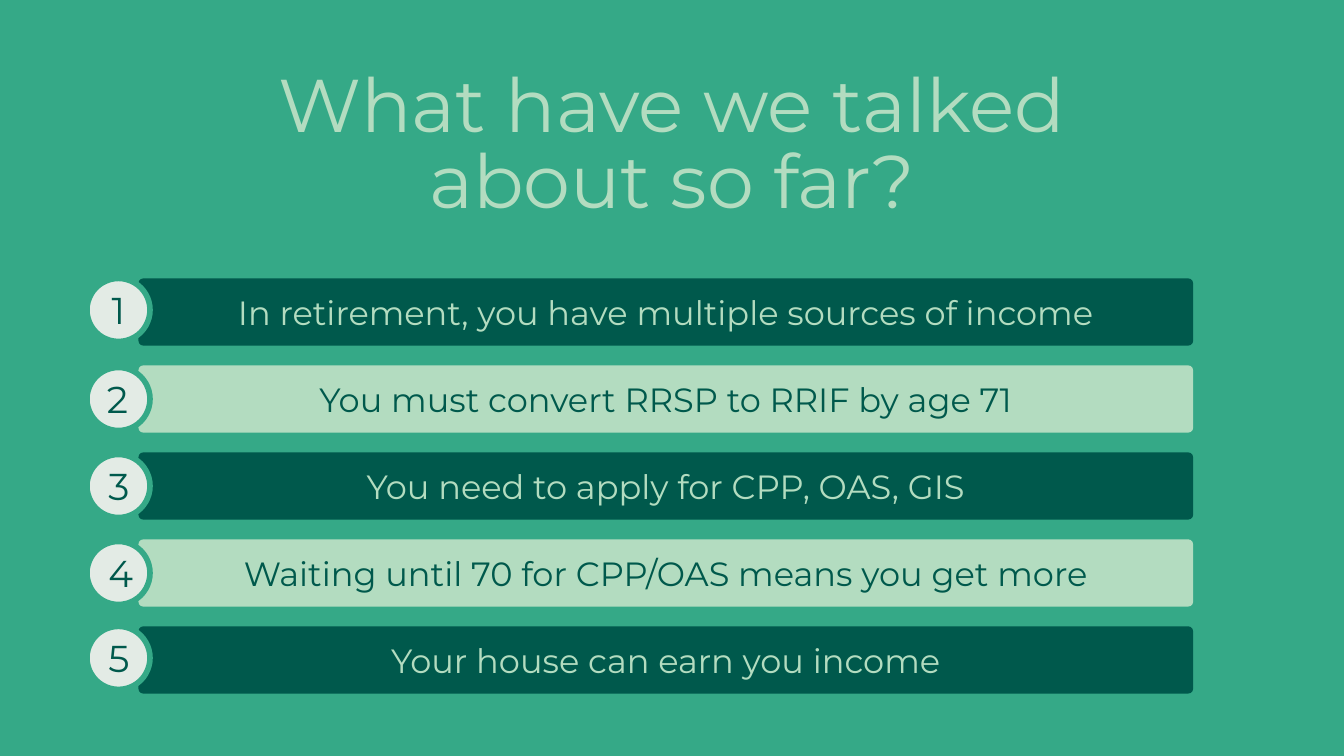
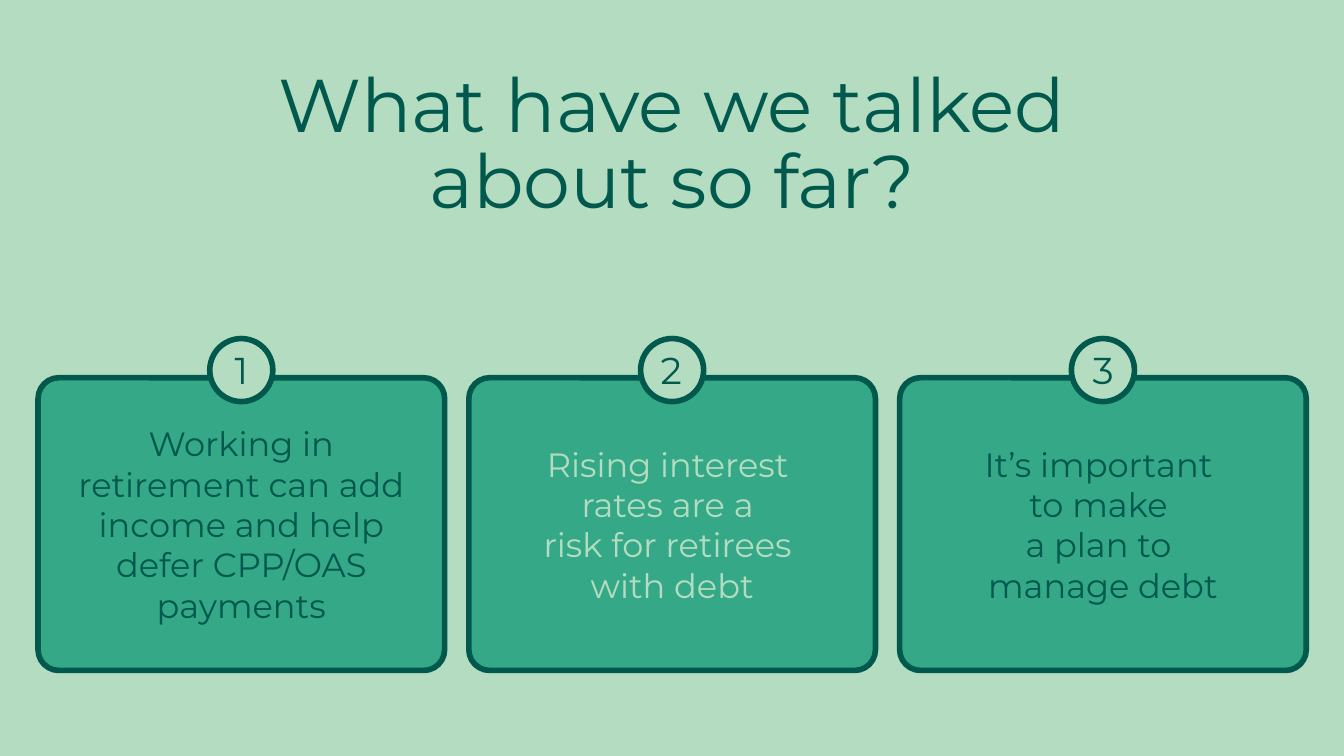
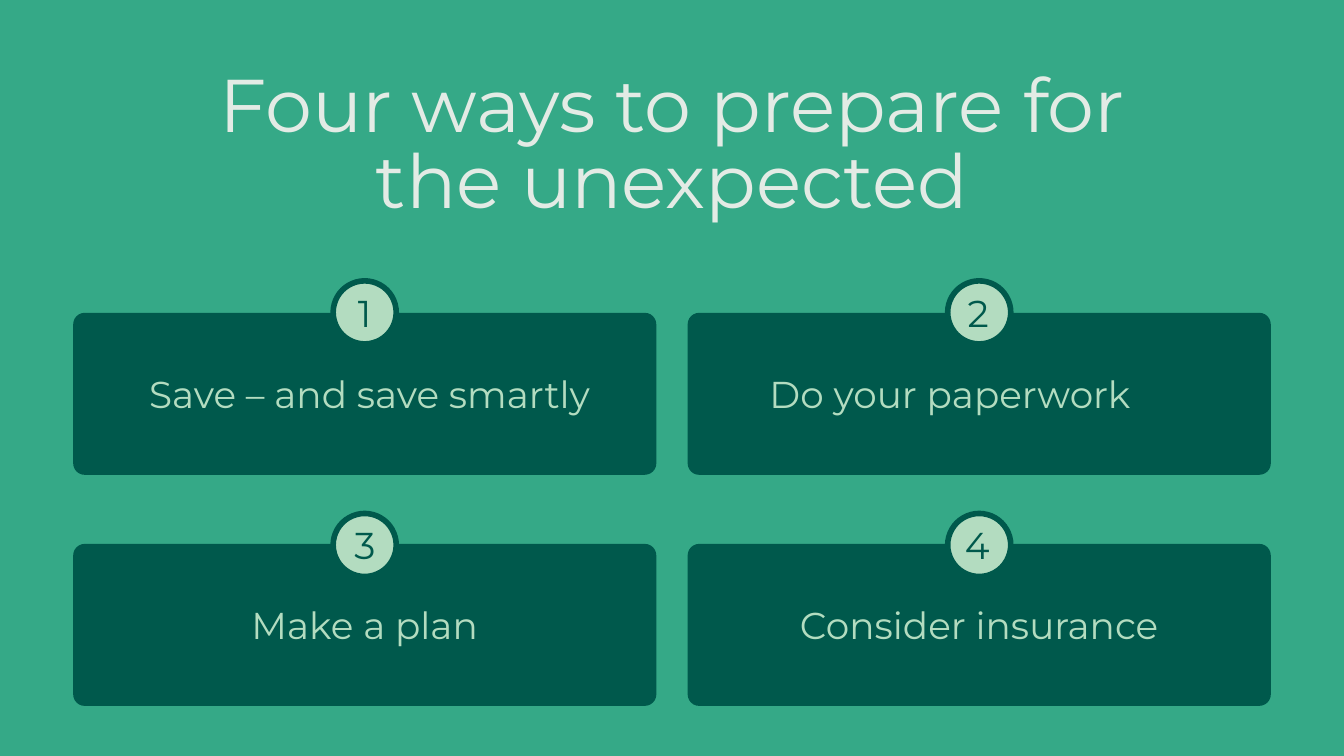
from dataclasses import dataclass

from pptx import Presentation
from pptx.dml.color import RGBColor
from pptx.enum.shapes import MSO_SHAPE
from pptx.enum.text import MSO_ANCHOR, PP_ALIGN
from pptx.util import Pt


@dataclass(frozen=True)
class Theme:
    font: str = "Montserrat"
    green: RGBColor = RGBColor.from_string("35A987")
    dark: RGBColor = RGBColor.from_string("00594C")
    mint: RGBColor = RGBColor.from_string("B3DCC0")
    pale: RGBColor = RGBColor.from_string("E3EBE5")
    title_size: float = 40
    body_size: float = 18
    label_size: float = 20
    outline: float = 3
    corner: float = 0.071
    inset: float = 7.2
    badge: float = 33.8


THEME = Theme()
RECAP_TITLE = "What have we talked about so far?"


def write(box, text, size, color, left_inset=THEME.inset, right_inset=THEME.inset):
    """Put centred text into a box and return its paragraph."""
    frame = box.text_frame
    frame.word_wrap = True
    frame.margin_left, frame.margin_right = Pt(left_inset), Pt(right_inset)
    frame.margin_top = frame.margin_bottom = Pt(THEME.inset)
    para = frame.paragraphs[0]
    para.text = text
    para.alignment = PP_ALIGN.CENTER
    for span in para.runs:
        span.font.name = THEME.font
        span.font.size = Pt(size)
        span.font.color.rgb = color
    return para


def add_page(deck, background):
    """Add a blank page with a plain background."""
    page = deck.slides.add_slide(deck.slide_layouts[6])
    page.background.fill.solid()
    page.background.fill.fore_color.rgb = background
    return page


def add_title(page, text, color, left, width, height):
    """Add the large heading."""
    box = page.shapes.add_textbox(Pt(left), Pt(31), Pt(width), Pt(height))
    write(box, text, THEME.title_size, color).line_spacing = 0.85


def add_figure(page, kind, left, top, width, height, fill, line=None):
    """Add a flat filled shape with an optional outline."""
    box = page.shapes.add_shape(kind, Pt(left), Pt(top), Pt(width), Pt(height))
    box.shadow.inherit = False
    box.fill.solid()
    box.fill.fore_color.rgb = fill
    if line is None:
        box.line.fill.background()
    else:
        box.line.color.rgb = line
        box.line.width = Pt(THEME.outline)
    box.text_frame.vertical_anchor = MSO_ANCHOR.MIDDLE
    return box


def add_card(page, left, top, width, height, fill, line=None):
    """Add a rounded rectangle."""
    card = add_figure(page, MSO_SHAPE.ROUNDED_RECTANGLE, left, top, width, height, fill, line)
    card.adjustments[0] = THEME.corner
    return card


def add_badge(page, number, left, top, fill, line, left_inset):
    """Add a numbered circle."""
    badge = add_figure(page, MSO_SHAPE.OVAL, left, top, THEME.badge, THEME.badge, fill, line)
    write(badge, str(number), THEME.label_size, THEME.dark, left_inset)


def build_recap_list(deck):
    """Build the list of five numbered bars."""
    page = add_page(deck, THEME.green)
    add_title(page, RECAP_TITLE, THEME.mint, 131, 458, 110)
    points = [
        ("In retirement, you have multiple sources of income", 0, 7.2),
        ("You must convert RRSP to RRIF by age 71", 1.1, 5.8),
        ("You need to apply for CPP, OAS, GIS", 1.1, 6.5),
        ("Waiting until 70 for CPP/OAS means you get more", 1.1, 6.5),
        ("Your house can earn you income", 0, 6.5),
    ]
    for index, (text, badge_drop, badge_inset) in enumerate(points):
        top = 149.2 + index * 46.6
        fill, color = (THEME.mint, THEME.dark) if index % 2 else (THEME.dark, THEME.mint)
        bar = add_card(page, 74.2, top, 565, 36, fill)
        write(bar, text, THEME.body_size, color)
        add_badge(page, index + 1, 46.6, top + badge_drop, THEME.pale, THEME.green, badge_inset)


def build_recap_cards(deck):
    """Build the row of three outlined cards."""
    page = add_page(deck, THEME.mint)
    add_title(page, RECAP_TITLE, THEME.dark, 131, 458, 110)
    points = [
        ("Working in retirement can add income and help defer CPP/OAS payments", THEME.dark, 7.2),
        ("Rising interest \nrates are a \nrisk for retirees \nwith debt", THEME.mint, 5.8),
        ("It’s important \nto make \na plan to \nmanage debt", THEME.dark, 6.5),
    ]
    width = 217.8
    for index, (text, color, badge_inset) in enumerate(points):
        left = 20.4 + index * 230.8
        card = add_card(page, left, 202.4, width, 156.8, THEME.green, THEME.dark)
        write(card, text, THEME.body_size, color)
        badge_left = left + (width - THEME.badge) / 2
        add_badge(page, index + 1, badge_left, 181.4, THEME.mint, THEME.dark, badge_inset)


def build_four_ways(deck):
    """Build the two by two grid of cards."""
    page = add_page(deck, THEME.green)
    add_title(page, "Four ways to prepare for the unexpected", THEME.pale, 107, 506, 91.4)
    ways = [
        ("Save – and save smartly", 12.4, 7.2, 7.2),
        ("Do your paperwork", 7.2, 38.4, 5.8),
        ("Make a plan", 7.2, 7.2, 6.5),
        ("Consider insurance", 7.2, 7.2, 4.3),
    ]
    width = 312.4
    for index, (text, left_inset, right_inset, badge_inset) in enumerate(ways):
        row, column = divmod(index, 2)
        left = 39.2 + column * 329.2
        card = add_card(page, left, 167.6 + row * 123.8, width, 86.8, THEME.dark)
        write(card, text, THEME.label_size, THEME.mint, left_inset, right_inset)
        badge_left = left + (width - THEME.badge) / 2
        badge_top = 150.5 + row * 124.6
        add_badge(page, index + 1, badge_left, badge_top, THEME.mint, THEME.dark, badge_inset)


def main():
    """Build and save the deck."""
    deck = Presentation()
    deck.slide_width, deck.slide_height = Pt(720), Pt(405)
    build_recap_list(deck)
    build_recap_cards(deck)
    build_four_ways(deck)
    deck.save("out.pptx")


if __name__ == "__main__":
    main()
